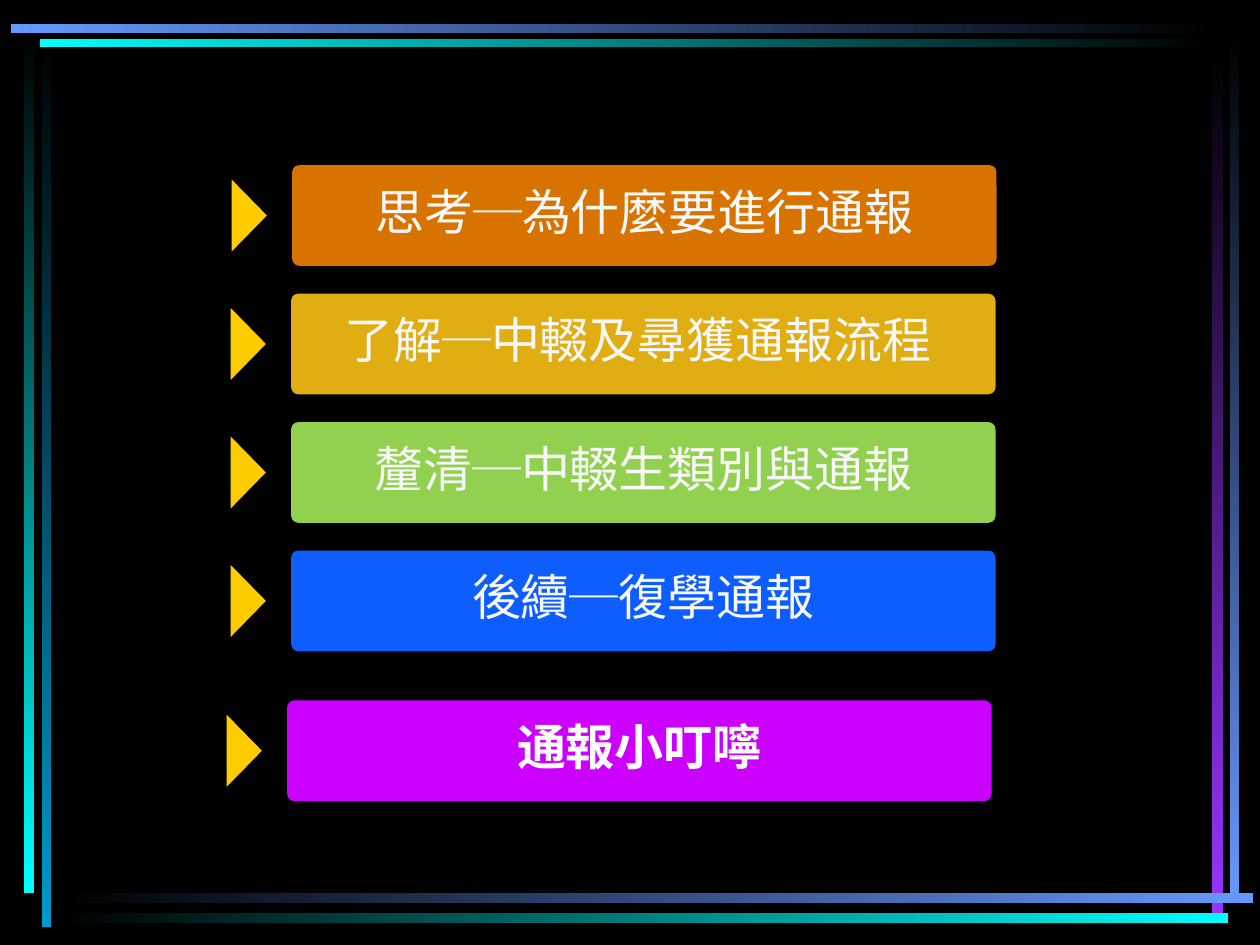
from lxml.etree import SubElement
from pptx import Presentation
from pptx.dml.color import RGBColor
from pptx.enum.shapes import MSO_SHAPE
from pptx.enum.text import MSO_ANCHOR, PP_ALIGN
from pptx.oxml.ns import qn
from pptx.util import Cm, Pt

BLACK = RGBColor(0x00, 0x00, 0x00)
WHITE = RGBColor(0xFF, 0xFF, 0xFF)
OFF_WHITE = RGBColor(0xF8, 0xF8, 0xF8)
CYAN = RGBColor(0x00, 0xFF, 0xFF)
TEAL_BLUE = RGBColor(0x00, 0x99, 0xCC)
SKY_BLUE = RGBColor(0x66, 0x99, 0xFF)
VIOLET = RGBColor(0x99, 0x33, 0xFF)
GOLD = RGBColor(0xFF, 0xCC, 0x00)
ORANGE = RGBColor(0xD9, 0x73, 0x00)
MUSTARD = RGBColor(0xE0, 0xAD, 0x12)
GREEN = RGBColor(0x92, 0xD0, 0x50)
BLUE = RGBColor(0x0D, 0x5D, 0xFF)
MAGENTA = RGBColor(0xCC, 0x00, 0xFF)
FONT = "Noto Sans CJK SC"

presentation = Presentation()
presentation.slide_width = Cm(25.4)
presentation.slide_height = Cm(19.05)
slide = presentation.slides.add_slide(presentation.slide_layouts[6])
slide.background.fill.solid()
slide.background.fill.fore_color.rgb = BLACK


def add_plain_shape(kind, left, top, width, height, color=None):
    """Add a shape without line or shadow; lengths are in centimetres."""
    shape = slide.shapes.add_shape(kind, Cm(left), Cm(top), Cm(width), Cm(height))
    shape.shadow.inherit = False
    shape.line.fill.background()
    if color is not None:
        shape.fill.solid()
        shape.fill.fore_color.rgb = color
    return shape


# Frame bars: left, top, width, height, first colour, last colour
frame_bars = [
    (0.84, 0.71, 0.2, 17.98, BLACK, TEAL_BLUE),
    (0.48, 0.64, 0.2, 17.37, BLACK, CYAN),
    (24.79, 0.61, 0.18, 17.6, BLACK, SKY_BLUE),
    (24.43, 1.07, 0.23, 17.35, BLACK, VIOLET),
    (1.14, 18.0, 24.13, 0.2, BLACK, SKY_BLUE),
    (1.14, 18.41, 23.62, 0.2, BLACK, CYAN),
    (0.81, 0.79, 23.67, 0.15, CYAN, BLACK),
    (0.22, 0.48, 24.28, 0.18, SKY_BLUE, BLACK),
]
for left, top, width, height, first, last in frame_bars:
    bar = add_plain_shape(MSO_SHAPE.RECTANGLE, left, top, width, height)
    bar.fill.gradient()
    bar.fill.gradient_angle = 270 if height > width else 0
    for stop, color in zip(bar.fill.gradient_stops, (first, last)):
        stop.color.rgb = color

# Agenda rows: text, box colour, text colour, bold, left, top
FIRST_TOP, ROW_STEP = 3.33, 2.59
agenda = [
    ("思考─為什麼要進行通報", ORANGE, OFF_WHITE, False, 5.89, FIRST_TOP),
    ("了解─中輟及尋獲通報流程 ", MUSTARD, OFF_WHITE, False, 5.87, FIRST_TOP + ROW_STEP),
    ("釐清─中輟生類別與通報", GREEN, OFF_WHITE, False, 5.87, FIRST_TOP + 2 * ROW_STEP),
    ("後續─復學通報", BLUE, OFF_WHITE, False, 5.87, FIRST_TOP + 3 * ROW_STEP),
    ("通報小叮嚀", MAGENTA, WHITE, True, 5.79, 14.12),
]
for text, box_color, text_color, bold, left, top in agenda:
    marker = add_plain_shape(
        MSO_SHAPE.ISOSCELES_TRIANGLE, left - 1.59, top + 0.66, 1.45, 0.71, GOLD)
    marker.rotation = 90

    box = add_plain_shape(MSO_SHAPE.ROUNDED_RECTANGLE, left, top, 14.2, 2.03, box_color)
    box.adjustments[0] = 0.07
    frame = box.text_frame
    frame.word_wrap = True
    frame.vertical_anchor = MSO_ANCHOR.MIDDLE
    frame.margin_left = frame.margin_right = Cm(0.13)
    frame.margin_top = frame.margin_bottom = Cm(0.13)
    frame.text = text
    paragraph = frame.paragraphs[0]
    paragraph.alignment = PP_ALIGN.CENTER
    paragraph.line_spacing = 0.85
    paragraph.space_before = Pt(8.4)
    run = paragraph.runs[0]
    run.font.size = Pt(28)
    run.font.bold = bold
    run.font.color.rgb = text_color
    run.font.name = FONT
    SubElement(run.font._element, qn("a:ea"), typeface=FONT)

presentation.save("out.pptx")
